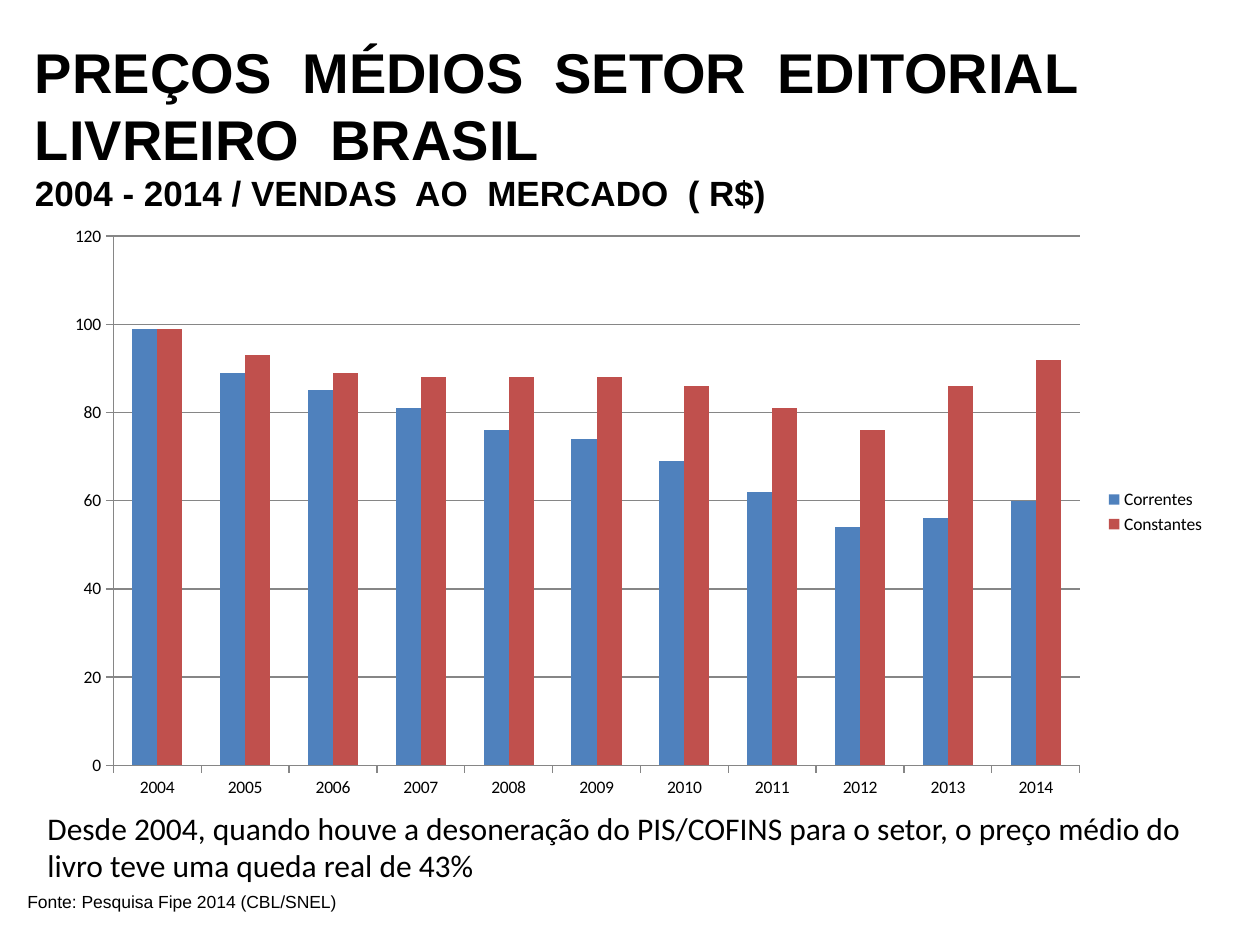
"""Build the slide on average book prices in Brazil, 2004 to 2014."""
import pptx
import pptx.chart.data
import pptx.dml.color
import pptx.enum.chart
import pptx.enum.text
import pptx.util

Pt = pptx.util.Pt
BLACK = pptx.dml.color.RGBColor(0x00, 0x00, 0x00)
GRAY = pptx.dml.color.RGBColor(0x86, 0x86, 0x86)
BLUE = pptx.dml.color.RGBColor(0x4F, 0x81, 0xBD)
RED = pptx.dml.color.RGBColor(0xC0, 0x50, 0x4D)

YEARS = [str(year) for year in range(2004, 2015)]
PRICES = [
    ("Correntes", BLUE, (99, 89, 85, 81, 76, 74, 69, 62, 54, 56, 60)),
    ("Constantes", RED, (99, 93, 89, 88, 88, 88, 86, 81, 76, 86, 92)),
]


class SlideWriter:
    def __init__(self, slide, heading_font="Arial", body_font="Calibri"):
        self.slide = slide
        self.heading_font = heading_font
        self.body_font = body_font

    def style(self, font, size, name, bold=False):
        font.size = Pt(size)
        font.name = name
        font.bold = bold
        font.color.rgb = BLACK

    def text(self, box, lines, name, bold=False, wrap=True, margins=(7.2, 3.6),
             anchor=pptx.enum.text.MSO_ANCHOR.TOP):
        frame = self.slide.shapes.add_textbox(*map(Pt, box)).text_frame
        frame.word_wrap = wrap
        frame.vertical_anchor = anchor
        frame.margin_left = frame.margin_right = Pt(margins[0])
        frame.margin_top = frame.margin_bottom = Pt(margins[1])
        for index, (words, size) in enumerate(lines):
            paragraph = frame.add_paragraph() if index else frame.paragraphs[0]
            run = paragraph.add_run()
            run.text = words
            self.style(run.font, size, name, bold)

    def column_chart(self, box, categories, series):
        data = pptx.chart.data.CategoryChartData()
        data.categories = categories
        for name, _, values in series:
            data.add_series(name, values)
        chart = self.slide.shapes.add_chart(
            pptx.enum.chart.XL_CHART_TYPE.COLUMN_CLUSTERED, *map(Pt, box), data).chart
        self.style(chart.font, 10, self.body_font)
        chart.has_title = False
        chart.has_legend = True
        chart.legend.position = pptx.enum.chart.XL_LEGEND_POSITION.RIGHT
        chart.legend.include_in_layout = False

        plot = chart.plots[0]
        plot.gap_width = 150
        plot.overlap = 0
        plot.vary_by_categories = False
        for columns, (_, color, _) in zip(plot.series, series):
            columns.format.fill.solid()
            columns.format.fill.fore_color.rgb = color

        scale = chart.value_axis
        scale.minimum_scale, scale.maximum_scale, scale.major_unit = 0, 120, 20
        scale.has_major_gridlines = True
        for part in (chart.category_axis, scale, scale.major_gridlines):
            part.format.line.color.rgb = GRAY
            part.format.line.width = Pt(0.75)
        for axis in (chart.category_axis, scale):
            axis.major_tick_mark = pptx.enum.chart.XL_TICK_MARK.OUTSIDE
            axis.minor_tick_mark = pptx.enum.chart.XL_TICK_MARK.NONE


def main():
    deck = pptx.Presentation()
    deck.slide_width, deck.slide_height = Pt(720), Pt(540)
    writer = SlideWriter(deck.slides.add_slide(deck.slide_layouts[6]))
    writer.text(
        (20, 21, 623.5, 101.5),
        [("PREÇOS  MÉDIOS  SETOR  EDITORIAL  LIVREIRO  BRASIL", 32),
         ("2004 - 2014 / VENDAS  AO  MERCADO  ( R$)", 20)],
        writer.heading_font, bold=True, margins=(0, 0),
        anchor=pptx.enum.text.MSO_ANCHOR.MIDDLE)
    writer.column_chart((29.5, 122.5, 666.5, 340), YEARS, PRICES)
    writer.text(
        (20, 458.5, 686, 51),
        [("Desde 2004, quando houve a desoneração do PIS/COFINS para o setor, "
          "o preço médio do livro teve uma queda real de 43%", 18)],
        writer.body_font)
    writer.text(
        (8.5, 505.5, 192, 19.5),
        [("Fonte: Pesquisa Fipe 2014 (CBL/SNEL)", 10)],
        writer.heading_font, wrap=False)
    deck.save("out.pptx")


if __name__ == "__main__":
    main()
